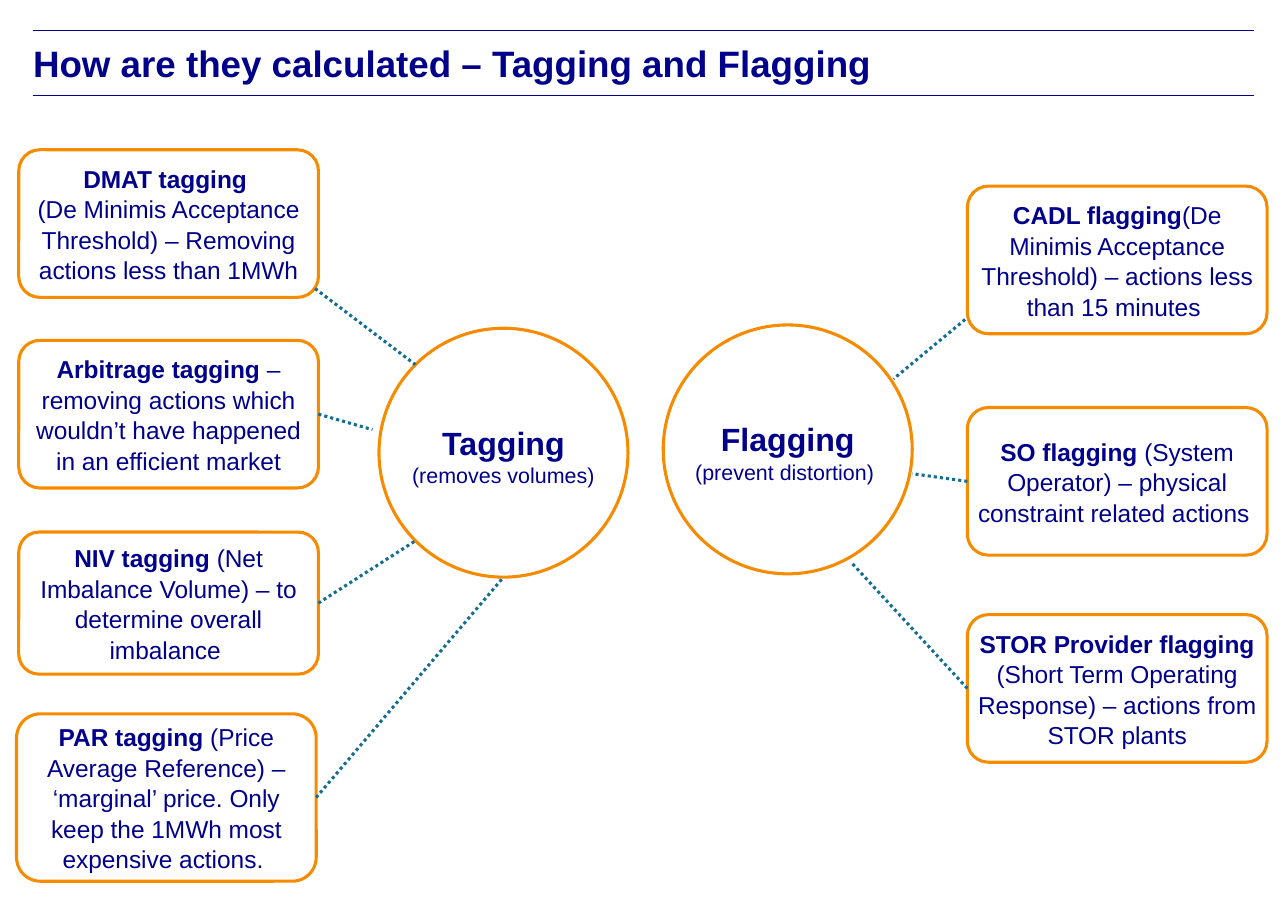
import pptx
import pptx.util
import pptx.dml.color
import pptx.enum.dml
import pptx.enum.shapes
import pptx.enum.text
import pptx.oxml.ns
import lxml.etree

Inches = pptx.util.Inches
Pt = pptx.util.Pt
SHAPES = pptx.enum.shapes.MSO_SHAPE
STRAIGHT = pptx.enum.shapes.MSO_CONNECTOR.STRAIGHT
ALIGN = pptx.enum.text.PP_ALIGN
ANCHOR = pptx.enum.text.MSO_ANCHOR

NAVY, ORANGE, TEAL, WHITE = "00008B", "F68B00", "156E91", "FFFFFF"
DIAMETER = 2.26
BOX_W = 2.72
TOP, LEFT, BOTTOM, RIGHT = range(4)


def rgb(value):
    return pptx.dml.color.RGBColor.from_string(value)


def set_attrs(obj, values):
    for name, value in values.items():
        setattr(obj, name, value)


def write(tf, paragraphs, frame, align=ALIGN.CENTER):
    """Each paragraph is a list of (text, size, bold) runs."""
    set_attrs(tf, {"margin_left": 0, "margin_right": 0, "margin_top": 0,
                   "margin_bottom": 0, **frame})
    for i, runs in enumerate(paragraphs):
        p = tf.paragraphs[0] if i == 0 else tf.add_paragraph()
        set_attrs(p, {"alignment": align, "line_spacing": 1.04,
                      "space_before": Pt(0)})
        for text, size, bold in runs:
            r = p.add_run()
            r.text = text
            set_attrs(r.font, {"name": "Arial", "size": Pt(size), "bold": bold})
            r.font.color.rgb = rgb(NAVY)


def add_outlined(s, kind, x, y, w, h):
    sp = s.shapes.add_shape(kind, Inches(x), Inches(y), Inches(w), Inches(h))
    sp.shadow.inherit = False
    sp.fill.solid()
    sp.fill.fore_color.rgb = rgb(WHITE)
    sp.line.color.rgb = rgb(ORANGE)
    sp.line.width = Pt(2)
    return sp


def add_line(s, start, end, color, width):
    cxn = s.shapes.add_connector(STRAIGHT, *map(Inches, start + end))
    cxn.line.color.rgb = rgb(color)
    cxn.line.width = Pt(width)
    lxml.etree.SubElement(cxn._element.spPr, pptx.oxml.ns.qn("a:effectLst"))
    return cxn


def add_header(s, x, y, w, h, text):
    # Rules above and below the title
    for rule_y in (y, y + h):
        add_line(s, (x, rule_y), (x + w, rule_y), NAVY, 0.5)
    title = s.shapes.title
    set_attrs(title, {"left": Inches(x), "top": Inches(y + 0.05),
                      "width": Inches(w), "height": Inches(h - 0.05)})
    write(title.text_frame, [[(text, 24, True)]],
          {"vertical_anchor": ANCHOR.TOP, "margin_top": Inches(0.02),
           "auto_size": pptx.enum.text.MSO_AUTO_SIZE.NONE}, ALIGN.LEFT)


def add_cluster(s, x, y, circle, boxes, side):
    """A circle and its boxes, each joined to it on the given box side."""
    # Central circle
    cx, cy, name, note = circle
    sp = add_outlined(s, SHAPES.OVAL, x + cx, y + cy, DIAMETER, DIAMETER)
    write(sp.text_frame, [[(name, 21, True)], [(note, 14, False)]],
          {"word_wrap": False, "vertical_anchor": ANCHOR.MIDDLE,
           "margin_top": Inches(0.04)})

    for bx, by, h, paragraphs, near, far in boxes:
        # Explanation box
        box = add_outlined(s, SHAPES.ROUNDED_RECTANGLE, x + bx, y + by, BOX_W, h)
        box.adjustments[0] = 0.143
        write(box.text_frame,
              [[(t, 16, bold) for t, bold in runs] for runs in paragraphs],
              {"word_wrap": True, "vertical_anchor": ANCHOR.MIDDLE,
               "margin_left": Inches(0.02), "margin_right": Inches(0.02)})
        # Dotted link; without a near point it joins the middle of the side
        end = (x + far[0], y + far[1])
        start = (x + near[0], y + near[1]) if near else end
        link = add_line(s, start, end, TEAL, 2)
        link.line.dash_style = pptx.enum.dml.MSO_LINE.ROUND_DOT
        if not near:
            link.begin_connect(box, side)


# Left, top, height, paragraphs, link start, link end (inches from the cluster corner)
TAGGING = [
    (0.02, 0, 1.34,
     [[("DMAT tagging ", True)],
      [("(De Minimis Acceptance Threshold) – Removing actions less than 1MWh", False)]],
     (2.71, 1.26), (3.62, 1.95)),
    (0.02, 1.73, 1.34,
     [[("Arbitrage tagging ", True),
       ("– removing actions which wouldn’t have happened in an efficient market", False)]],
     None, (3.23, 2.54)),
    (0.02, 3.47, 1.29,
     [[("NIV tagging ", True),
       ("(Net Imbalance Volume) – to determine overall imbalance ", False)]],
     None, (3.62, 3.55)),
    (0, 5.12, 1.52,
     [[("PAR tagging ", True),
       ("(Price Average Reference) – ‘marginal’ price. Only keep the 1MWh most "
        "expensive actions. ", False)]],
     None, (4.42, 3.88)),
]
FLAGGING = [
    (2.76, 0, 1.34,
     [[("CADL flagging", True),
       ("(De Minimis Acceptance Threshold) – actions less than 15 minutes ", False)]],
     (2.74, 1.21), (2.09, 1.75)),
    (2.76, 2.01, 1.34,
     [[("SO flagging", True),
       (" (System Operator) – physical constraint related actions ", False)]],
     None, (2.26, 2.61)),
    (2.76, 3.89, 1.34,
     [[("STOR Provider flagging ", True),
       ("(Short Term Operating Response) – actions from STOR plants", False)]],
     None, (1.71, 3.42)),
]


def main():
    prs = pptx.Presentation()
    prs.slide_width, prs.slide_height = Inches(11.69), Inches(8.27)
    s = prs.slides.add_slide(prs.slide_layouts[5])
    add_header(s, 0.3, 0.28, 11.08, 0.59,
               "How are they calculated – Tagging and Flagging")
    add_cluster(s, 0.15, 1.36, (3.29, 1.62, "Tagging", "(removes volumes)"),
                TAGGING, RIGHT)
    add_cluster(s, 6.02, 1.69, (0, 1.26, "Flagging", "(prevent distortion) "),
                FLAGGING, LEFT)
    prs.save("out.pptx")


if __name__ == "__main__":
    main()
